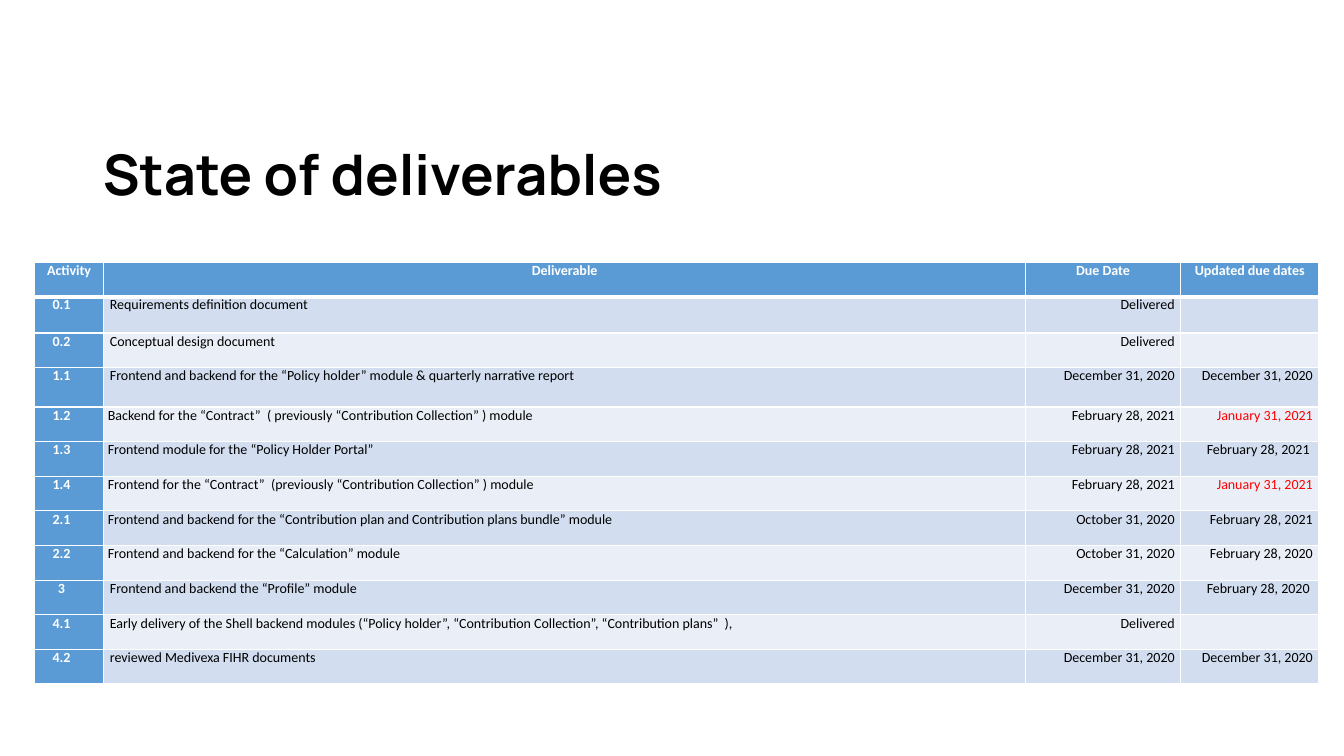
import pptx
import pptx.util
import pptx.dml.color
import pptx.enum.text
import pptx.oxml.ns
from lxml import etree

Inch, Pt = pptx.util.Inches, pptx.util.Pt
RGB = pptx.dml.color.RGBColor
Align = pptx.enum.text.PP_ALIGN
qn = pptx.oxml.ns.qn

WHITE, BLACK, RED = RGB(255, 255, 255), RGB(0, 0, 0), RGB(255, 0, 0)
BLUE, PALE, LIGHT = RGB(0x5B, 0x9B, 0xD5), RGB(0xD2, 0xDE, 0xEF), RGB(0xEA, 0xEF, 0xF7)

WIDE, HIGH = 13.33, 7.5
COLS = [0.69, 9.14, 1.54, 1.37]
TALL = {1: 0.36, 3: 0.39}  # rows higher than the rest
FLUSH = {"1.2", "1.3", "1.4", "2.1", "2.2"}  # deliverables without indent

HEAD = ("Activity", "Deliverable", "Due Date", "Updated due dates")
ROWS = [
    ("0.1", "Requirements definition document", "Delivered", ""),
    ("0.2", "Conceptual design document", "Delivered", ""),
    ("1.1", "Frontend and backend for the “Policy holder” module & quarterly narrative report",
     "December 31, 2020", "December 31, 2020"),
    ("1.2", "Backend for the “Contract”  ( previously “Contribution Collection” ) module",
     "February 28, 2021", "January 31, 2021"),
    ("1.3", "Frontend module for the “Policy Holder Portal”",
     "February 28, 2021", "February 28, 2021 "),
    ("1.4", "Frontend for the “Contract”  (previously “Contribution Collection” ) module",
     "February 28, 2021", "January 31, 2021"),
    ("2.1", "Frontend and backend for the “Contribution plan and Contribution plans bundle” module",
     "October 31, 2020", "February 28, 2021"),
    ("2.2", "Frontend and backend for the “Calculation” module",
     "October 31, 2020", "February 28, 2020"),
    ("3", "Frontend and backend the “Profile” module",
     "December 31, 2020", "February 28, 2020 "),
    ("4.1", "Early delivery of the Shell backend modules (“Policy holder”, "
     "“Contribution Collection”, “Contribution plans”  ),", "Delivered", ""),
    ("4.2", "reviewed Medivexa FIHR documents", "December 31, 2020", "December 31, 2020"),
]


def assign(item, **values):
    for name, value in values.items():
        setattr(item, name, value)


def write(part, text, align, color, **font):
    part.text = text
    part.alignment = align
    run = part.runs[0]
    assign(run.font, **font)
    run.font.color.rgb = color


def border(cell, sides):
    props = cell._tc.get_or_add_tcPr()
    for side, width in sides.items():
        line = etree.SubElement(props, qn("a:ln" + side), w=str(Pt(width)))
        fill = etree.SubElement(line, qn("a:solidFill"))
        etree.SubElement(fill, qn("a:srgbClr"), val=str(WHITE))


def draw_title(slide, box, text):
    title = slide.shapes.title
    assign(title, **dict(zip(("left", "top", "width", "height"), map(Inch, box))))
    frame = title.text_frame
    assign(frame, word_wrap=True, auto_size=pptx.enum.text.MSO_AUTO_SIZE.NONE,
           vertical_anchor=pptx.enum.text.MSO_ANCHOR.MIDDLE)
    part = frame.paragraphs[0]
    write(part, text, Align.LEFT, BLACK, name="Manrope", size=Pt(40), bold=True)
    part.line_spacing = 0.9


def draw_cell(cell, text, row, col, flush):
    label = row == 0 or col == 0
    # Borders and fill
    border(cell, {"L": 1, "R": 1, "T": 3 if row == 1 else 1, "B": 3 if row == 0 else 1})
    cell.fill.solid()
    cell.fill.fore_color.rgb = BLUE if label else PALE if row % 2 else LIGHT
    # Insets: the numbers sit left of the column's middle
    left = 0.04 if row == 0 or flush else 0.06
    right = 0.21 if row and col == 0 else 0.06 if row and col > 1 else 0.04
    assign(cell, margin_left=Inch(left), margin_right=Inch(right),
           margin_top=0, margin_bottom=0)
    # Text
    part = cell.text_frame.paragraphs[0]
    if not text:
        etree.SubElement(part._p, qn("a:endParaRPr"), sz="1000")
        return
    align = Align.CENTER if label else Align.LEFT if col == 1 else Align.RIGHT
    color = WHITE if label else RED if text.startswith("January") else BLACK
    write(part, text, align, color, name="Calibri", size=Pt(10), bold=label)
    part.space_after = Pt(0 if flush else 6)


def draw_table(slide, box, data):
    table = slide.shapes.add_table(len(data), len(COLS), *map(Inch, box)).table
    for col, width in zip(table.columns, COLS):
        col.width = Inch(width)
    rest = (box[3] - sum(TALL.values())) / (len(data) - len(TALL))
    for r, line in enumerate(data):
        table.rows[r].height = Inch(TALL.get(r, rest))
        for c, text in enumerate(line):
            draw_cell(table.cell(r, c), text, r, c, c == 1 and line[0] in FLUSH)


def main():
    deck = pptx.Presentation()
    assign(deck, slide_width=Inch(WIDE), slide_height=Inch(HIGH))
    slide = deck.slides.add_slide(deck.slide_layouts[5])
    draw_table(slide, (0.34, 2.6, sum(COLS), 4.19), [HEAD] + ROWS)
    draw_title(slide, (0.92, 1.24, 11.5, 1.03), "State of deliverables")
    deck.save("out.pptx")


if __name__ == "__main__":
    main()
